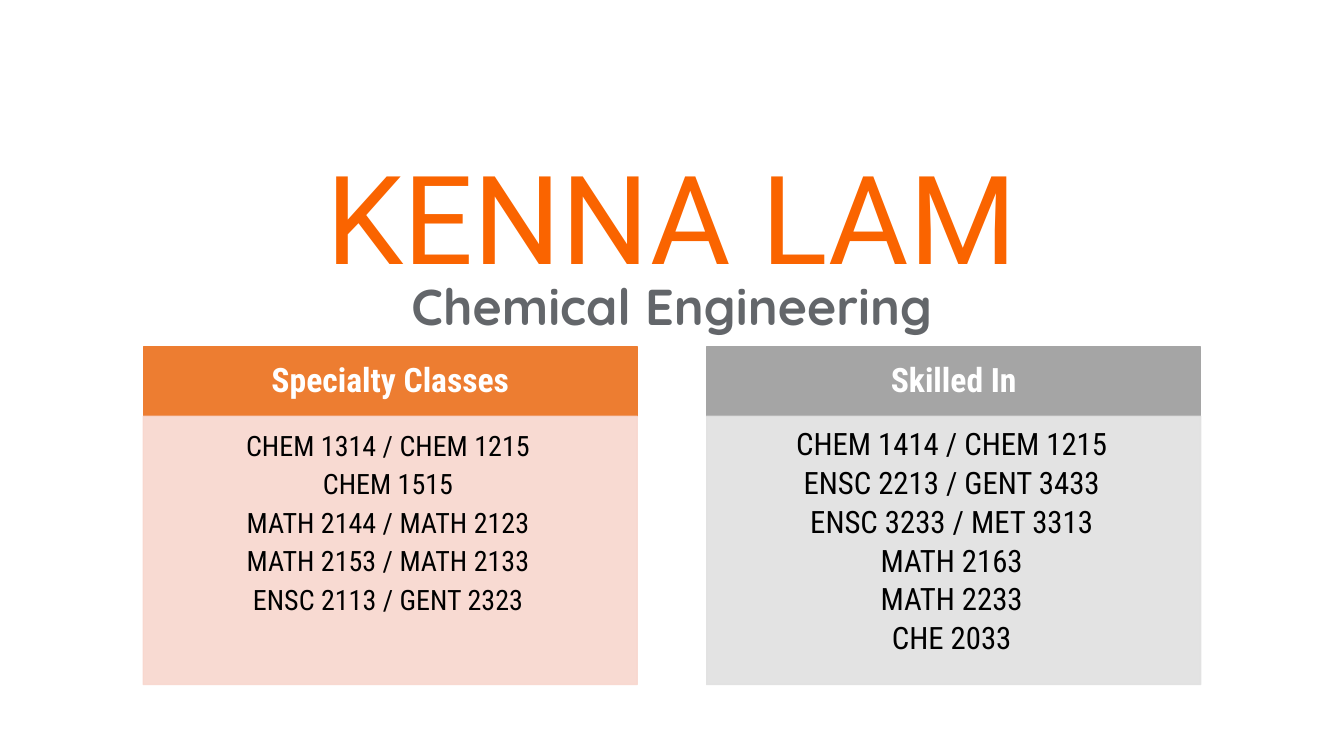
import pptx
import pptx.util
import pptx.dml.color
import pptx.enum.shapes
import pptx.enum.text
import pptx.oxml
import pptx.oxml.ns

Cm, Pt = pptx.util.Cm, pptx.util.Pt
Align = pptx.enum.text.PP_ALIGN
Anchor = pptx.enum.text.MSO_ANCHOR
RGB = pptx.dml.color.RGBColor.from_string

hues = {"name": "FA6400", "major": "63666A", "orange": "ED7D31", "peach": "F8D7CE",
        "gray": "A5A5A5", "pale": "E1E1E1", "white": "FFFFFF", "black": "000000"}


def write(shape, lines, face, size, hue, bold=False, anchor=Anchor.TOP,
          pads=(0.25, 0.13, 0.25, 0.13), gap=0, lead=1.0):
    """Fill a shape with centred paragraphs in one style."""
    frame = shape.text_frame
    sides = ("margin_left", "margin_top", "margin_right", "margin_bottom")
    looks = {"word_wrap": True, "auto_size": pptx.enum.text.MSO_AUTO_SIZE.NONE,
             "vertical_anchor": anchor, **{s: Cm(p) for s, p in zip(sides, pads)}}
    for key, val in looks.items():
        setattr(frame, key, val)
    for i, line in enumerate(lines):
        par = frame.add_paragraph() if i else frame.paragraphs[0]
        rules = {"alignment": Align.CENTER, "line_spacing": lead,
                 "space_before": Pt(0), "space_after": Pt(gap)}
        for key, val in rules.items():
            setattr(par, key, val)
        run = par.add_run()
        run.text = line
        for key, val in {"name": face, "size": Pt(size), "bold": bold}.items():
            setattr(run.font, key, val)
        run.font.color.rgb = RGB(hues[hue])


def block(left, top, high, hue, alpha=100):
    """Add a rectangle with fill and line of one colour."""
    box = slide.shapes.add_shape(pptx.enum.shapes.MSO_SHAPE.RECTANGLE,
                                 Cm(left), Cm(top), Cm(wide), Cm(high))
    box.shadow.inherit = False
    box.fill.solid()
    box.fill.fore_color.rgb = box.line.color.rgb = RGB(hues[hue])
    box.line.width = Pt(1)
    if alpha < 100:
        for tint in box.fill._xPr.iter(pptx.oxml.ns.qn("a:srgbClr")):
            clear = pptx.oxml.parse_xml(
                f'<a:alpha {pptx.oxml.ns.nsdecls("a")} val="{alpha * 1000}"/>')
            tint.append(clear)
    return box


deck = pptx.Presentation()
deck.slide_width, deck.slide_height = Cm(33.87), Cm(19.05)
slide = deck.slides.add_slide(deck.slide_layouts[5])

# Name and major
title = slide.shapes.title
spots = {"left": Cm(1.6), "top": Cm(3.43), "width": Cm(30.66), "height": Cm(4.01)}
for key, val in spots.items():
    setattr(title, key, val)
write(title, ["KENNA LAM"], "Roboto", 88, "name")
major = slide.shapes.add_textbox(Cm(1.6), Cm(6.81), Cm(30.66), Cm(1.8))
write(major, ["Chemical Engineering"], "Quicksand", 36, "major", bold=True)

# Two class panels
wide, top, head = 12.45, 8.74, 1.75
panels = [
    {"left": 3.61, "name": "Specialty Classes", "dark": "orange", "light": "peach",
     "style": {"size": 20, "gap": 3.5, "pads": (0.3, 0.3, 0.41, 0.43)},
     "lines": ["CHEM 1314 / CHEM 1215", "CHEM 1515", "MATH 2144 / MATH 2123",
               "MATH 2153 / MATH 2133", "ENSC 2113 / GENT 2323"]},
    {"left": 17.81, "name": "Skilled In", "dark": "gray", "light": "pale",
     "style": {"size": 22, "gap": 3.9, "lead": 0.9, "pads": (0.33, 0.33, 0.43, 0.48)},
     "lines": ["CHEM 1414 / CHEM 1215", "ENSC 2213 / GENT 3433",
               "ENSC 3233 / MET 3313", "MATH 2163", "MATH 2233", "CHE 2033"]},
]
face = "Roboto Condensed"
for panel in panels:
    bar = block(panel["left"], top, head, panel["dark"])
    write(bar, [panel["name"]], face, 24, "white", bold=True, anchor=Anchor.MIDDLE,
          pads=(0.48, 0.28, 0.48, 0.28), lead=0.9)
    body = block(panel["left"], top + head, 6.76, panel["light"], alpha=90)
    write(body, panel["lines"], face, hue="black", **panel["style"])

deck.save("out.pptx")
